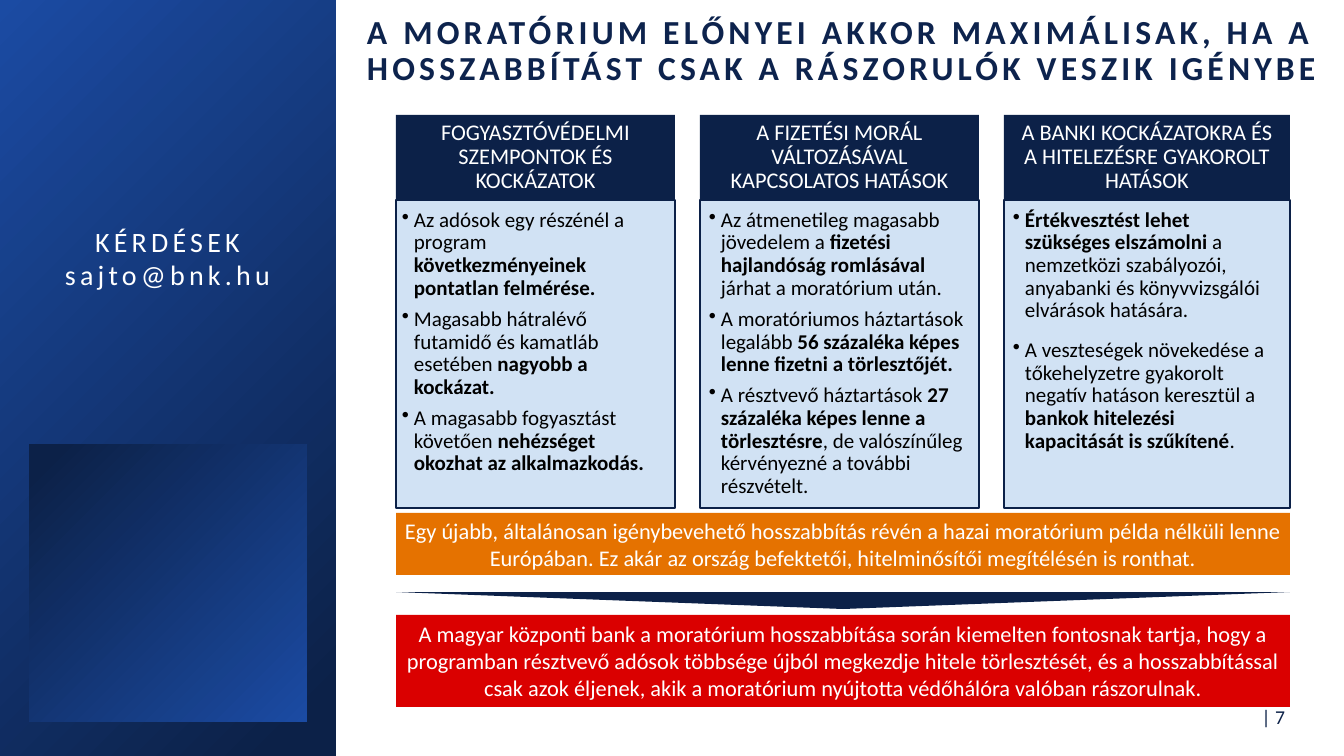
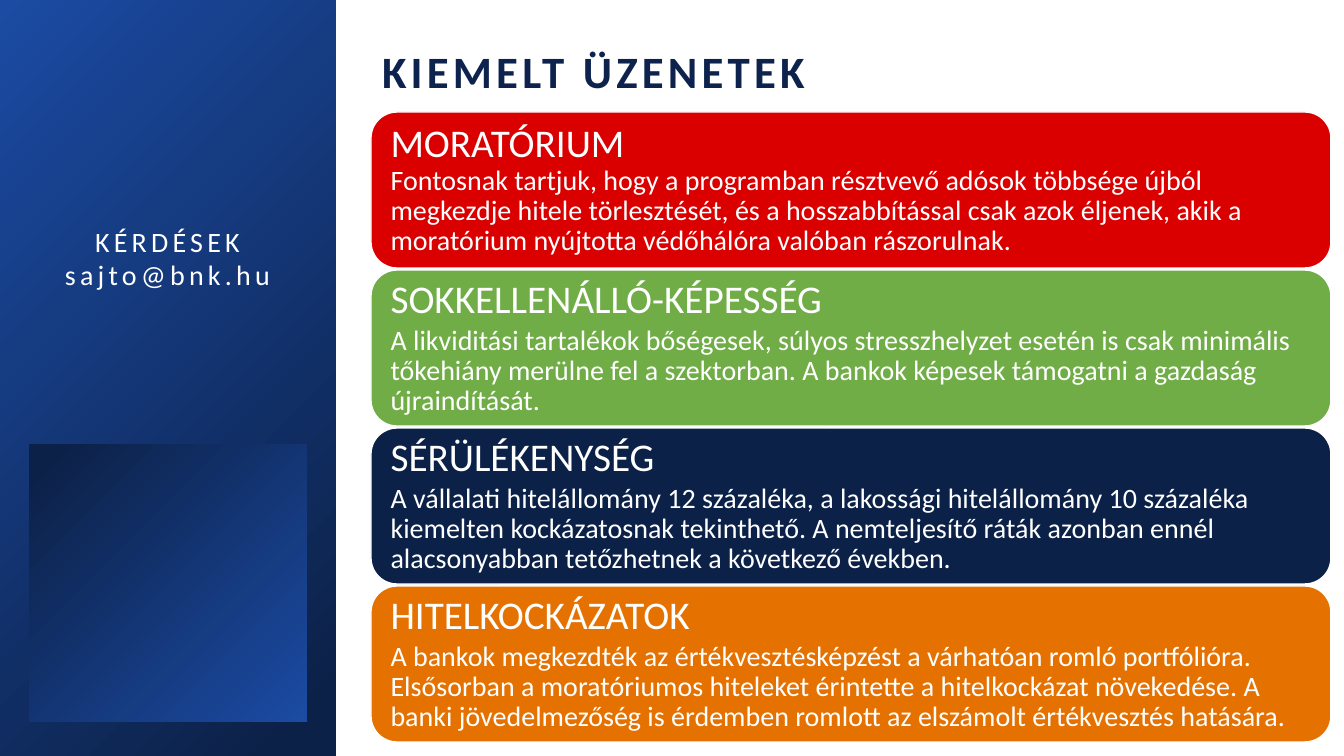
from lxml import etree
from pptx import Presentation
from pptx.dml.color import RGBColor
from pptx.enum.shapes import MSO_SHAPE
from pptx.enum.text import MSO_ANCHOR, PP_ALIGN
from pptx.oxml.ns import qn
from pptx.util import Pt

RECT, ROUND, WEDGE = MSO_SHAPE.RECTANGLE, MSO_SHAPE.ROUNDED_RECTANGLE, MSO_SHAPE.ISOSCELES_TRIANGLE
LEFT, CENTER, RIGHT = PP_ALIGN.LEFT, PP_ALIGN.CENTER, PP_ALIGN.RIGHT
TOP, MIDDLE = MSO_ANCHOR.TOP, MSO_ANCHOR.MIDDLE
WIDE, HIGH = 1344, 756
SCALE = 12192000 / WIDE
SIDES = ("margin_left", "margin_top", "margin_right", "margin_bottom")
COLORS = {
    "navy": "0C2148", "blue": "1B4BA3", "title": "0D234D", "pale": "CCDFF3",
    "red": "DA0000", "green": "70AD47", "orange": "E57200",
    "white": "FFFFFF", "black": "000000",
}

COLUMNS = [
    (396, 279, 6, 6, "FOGYASZTÓVÉDELMI SZEMPONTOK ÉS KOCKÁZATOK", [
        "Az adósok egy részénél a program *következményeinek pontatlan felmérése.*",
        "Magasabb hátralévő futamidő és kamatláb esetében *nagyobb a kockázat.*",
        "A magasabb fogyasztást követően *nehézséget okozhat az alkalmazkodás.*",
    ]),
    (700, 279, 9, 6, "A FIZETÉSI MORÁL VÁLTOZÁSÁVAL KAPCSOLATOS HATÁSOK", [
        "Az átmenetileg magasabb jövedelem a *fizetési hajlandóság romlásával* "
        "járhat a moratórium után.",
        "A moratóriumos háztartások legalább *56 százaléka képes lenne fizetni a törlesztőjét.*",
        "A résztvevő háztartások *27 százaléka képes lenne a törlesztésre*, "
        "de valószínűleg kérvényezné a további részvételt.",
    ]),
    (1004, 286, 9, 12, "A BANKI KOCKÁZATOKRA ÉS A HITELEZÉSRE GYAKOROLT HATÁSOK", [
        "*Értékvesztést lehet szükséges elszámolni* a nemzetközi szabályozói, "
        "anyabanki és könyvvizsgálói elvárások hatására.",
        "A veszteségek növekedése a tőkehelyzetre gyakorolt negatív hatáson keresztül a "
        "*bankok hitelezési kapacitását is szűkítené*.",
    ]),
]

CARDS = [
    ("red", 0, "MORATÓRIUM",
     "Fontosnak tartjuk, hogy a programban résztvevő adósok többsége újból megkezdje hitele "
     "törlesztését, és a hosszabbítással csak azok éljenek, akik a moratórium nyújtotta "
     "védőhálóra valóban rászorulnak."),
    ("green", 3, "SOKKELLENÁLLÓ-KÉPESSÉG",
     "A likviditási tartalékok bőségesek, súlyos stresszhelyzet esetén is csak minimális "
     "tőkehiány merülne fel a szektorban. A bankok képesek támogatni a gazdaság újraindítását."),
    ("navy", 3, "SÉRÜLÉKENYSÉG",
     "A vállalati hitelállomány 12 százaléka, a lakossági hitelállomány 10 százaléka kiemelten "
     "kockázatosnak tekinthető. A nemteljesítő ráták azonban ennél alacsonyabban tetőzhetnek "
     "a következő években."),
    ("orange", 3, "HITELKOCKÁZATOK",
     "A bankok megkezdték az értékvesztésképzést a várhatóan romló portfólióra. Elsősorban a "
     "moratóriumos hiteleket érintette a hitelkockázat növekedése. A banki jövedelmezőség is "
     "érdemben romlott az elszámolt értékvesztés hatására."),
]


def px(n):
    """Turn px into EMU."""
    return round(n * SCALE)


def rgb(name):
    """Look up a colour by name."""
    return RGBColor.from_string(COLORS[name])


class Deck:
    """Holds the style and the current slide."""

    def __init__(self):
        """Start an empty deck."""
        self.prs = Presentation()
        self.prs.slide_width, self.prs.slide_height = px(WIDE), px(HIGH)
        self.slide = None

    def page(self, title, box, size):
        """Add a slide with its side panel and title."""
        self.slide = self.prs.slides.add_slide(self.prs.slide_layouts[6])
        self.blend((0, 0, 336, HIGH))
        self.blend((29, 444, 278, 278), 180)
        self.label((40, 219, 255, 78), ["KÉRDÉSEK", "sajto@bnk.hu"],
                   size=20, color="white", align=CENTER, track=300)
        self.label(box, [title], size=size, color="title", bold=True, track=300,
                   lines=0.9, anchor=MIDDLE, inset=(8, 4, 8, 4))

    def shape(self, kind, box, fill=None, line=None, turn=0, alpha=None):
        """Add a preset shape."""
        item = self.slide.shapes.add_shape(kind, *map(px, box))
        item.shadow.inherit = False
        item.rotation = turn
        if fill:
            item.fill.solid()
            item.fill.fore_color.rgb = rgb(fill)
        if alpha:
            tone = item._element.spPr.find(qn("a:solidFill"))[0]
            etree.SubElement(tone, qn("a:alpha")).set("val", str(alpha * 1000))
        if line:
            item.line.color.rgb = rgb(line)
            item.line.width = Pt(1)
        else:
            item.line.fill.background()
        return item

    def blend(self, box, turn=0):
        """Add a rectangle with the navy to blue gradient."""
        fill = self.shape(RECT, box, turn=turn).fill
        fill.gradient()
        fill.gradient_angle = 135
        for stop, name, spot in zip(fill.gradient_stops, ("navy", "blue"), (0.06, 1)):
            stop.color.rgb = rgb(name)
            stop.position = spot

    def label(self, box, texts, **form):
        """Add a text box."""
        self.prose(self.slide.shapes.add_textbox(*map(px, box)), texts, **form)

    def prose(self, item, texts, size=16, sizes=None, color="white", bold=False, align=LEFT,
              anchor=TOP, inset=(10, 5, 10, 5), lines=None, after=0, track=0, bullet=False):
        """Fill a shape with paragraphs, where stars mark bold."""
        frame = item.text_frame
        look = {"word_wrap": True, "vertical_anchor": anchor}
        look.update(zip(SIDES, map(px, inset)))
        for key, value in look.items():
            setattr(frame, key, value)
        for i, text in enumerate(texts):
            para = frame.paragraphs[0] if i == 0 else frame.add_paragraph()
            if bullet:
                self.bullet(para)
            last = i == len(texts) - 1
            look = {"alignment": align, "line_spacing": lines,
                    "space_after": Pt(0 if last else after)}
            for key, value in look.items():
                setattr(para, key, value)
            for j, part in enumerate(text.split("*")):
                if part:
                    self.run(para, part, sizes[i] if sizes else size,
                             color, bold or j % 2 == 1, track)

    def run(self, para, text, size, color, bold, track):
        """Add one run of text."""
        run = para.add_run()
        run.text = text
        for key, value in {"name": "Calibri", "size": Pt(size), "bold": bold}.items():
            setattr(run.font, key, value)
        run.font.color.rgb = rgb(color)
        if track:
            run._r.get_or_add_rPr().set("spc", str(track))

    def bullet(self, para):
        """Give a paragraph a hanging dot."""
        props = para._p.get_or_add_pPr()
        props.set("marL", str(px(12)))
        props.set("indent", str(px(-12)))
        etree.SubElement(props, qn("a:buChar")).set("char", "•")

    def column(self, left, width, pad, after, head, points):
        """Add a headed column of bullet points."""
        top = self.shape(RECT, (left, 115, width, 85), "navy")
        self.prose(top, [head], align=CENTER, anchor=MIDDLE, lines=0.9, inset=(12, 7, 12, 7))
        body = self.shape(RECT, (left, 200, width, 308), "pale", "navy", alpha=90)
        self.prose(body, points, size=15, color="black", lines=0.9, after=after,
                   inset=(pad, 9, 12, 13), bullet=True)

    def band(self, top, height, fill, text, inset):
        """Add a full-width band of centred text."""
        item = self.shape(RECT, (396, top, 894, height), fill)
        self.prose(item, [text], align=CENTER, inset=inset)

    def card(self, top, fill, after, head, text):
        """Add a rounded card with a heading and a message."""
        item = self.shape(ROUND, (371, top, 960, 156), fill, "white")
        self.prose(item, [head, text], sizes=(28, 20), anchor=MIDDLE, lines=0.9,
                   after=after, inset=(12, 12, 12, 12))


def main():
    """Build and save the deck."""
    deck = Deck()
    deck.page("A MORATÓRIUM ELŐNYEI AKKOR MAXIMÁLISAK, HA A HOSSZABBÍTÁST "
              "CSAK A RÁSZORULÓK VESZIK IGÉNYBE", (359, 12, 975, 79), 24)
    for column in COLUMNS:
        deck.column(*column)
    deck.band(513, 62, "orange",
              "Egy újabb, általánosan igénybevehető hosszabbítás révén a hazai moratórium példa "
              "nélküli lenne Európában. Ez akár az ország befektetői, hitelminősítői "
              "megítélésén is ronthat.", (0, 4, 0, 4))
    deck.shape(WEDGE, (396, 592, 894, 17), "navy", turn=180)
    deck.band(615, 92, "red",
              "A magyar központi bank a moratórium hosszabbítása során kiemelten fontosnak tartja, "
              "hogy a programban résztvevő adósok többsége újból megkezdje hitele törlesztését, "
              "és a hosszabbítással csak azok éljenek, akik a moratórium nyújtotta védőhálóra "
              "valóban rászorulnak.", (10, 5, 10, 5))
    deck.label((1225, 696, 70, 41), ["| 7"], size=14, color="navy", align=RIGHT, anchor=MIDDLE)

    deck.page("KIEMELT ÜZENETEK", (374, 34, 925, 79), 32)
    for i, card in enumerate(CARDS):
        deck.card(112 + 158 * i, *card)
    deck.prs.save("out.pptx")


if __name__ == "__main__":
    main()
